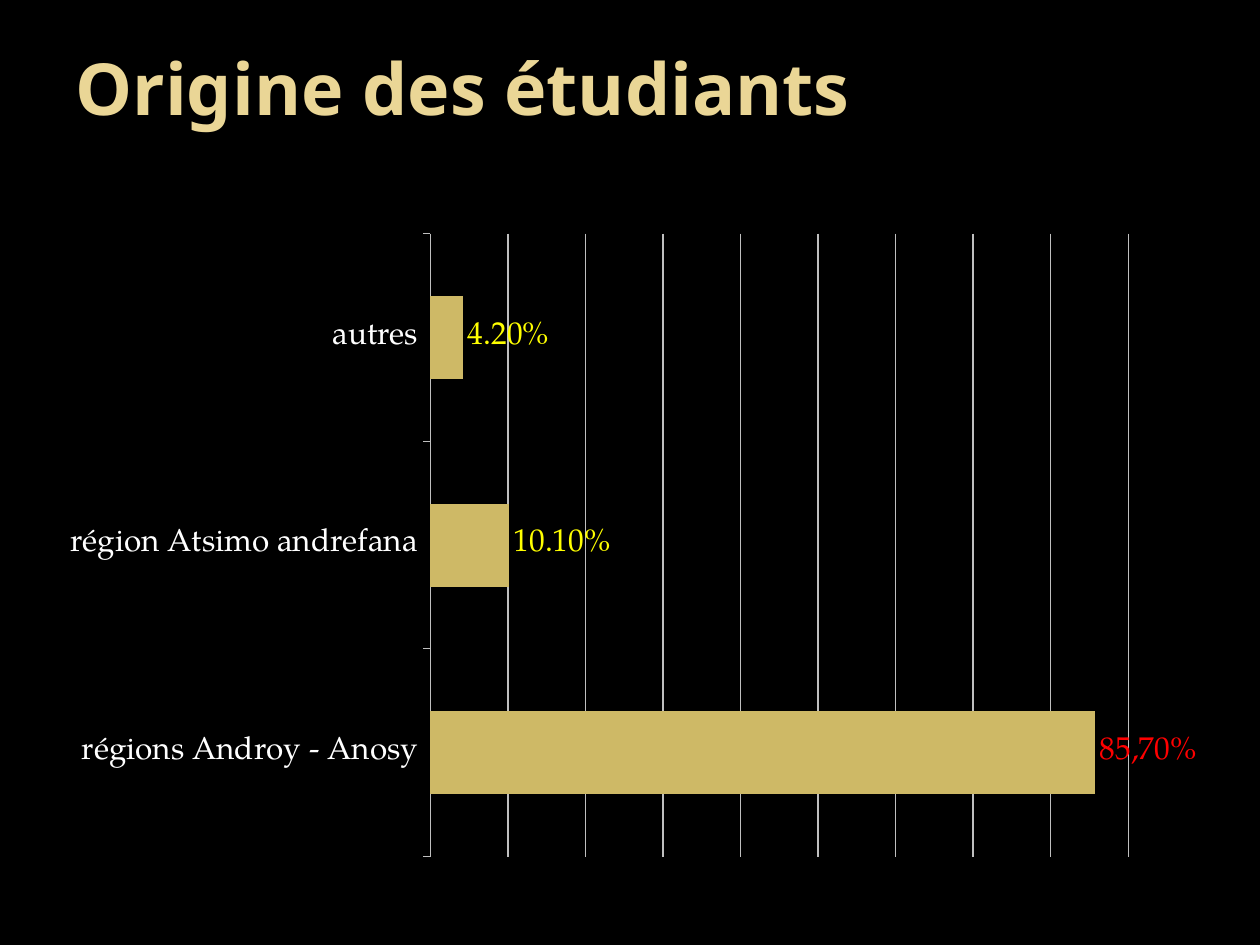
from lxml import etree
from pptx import Presentation, util as u
from pptx.chart import data
from pptx.dml.color import RGBColor
from pptx.enum import chart as c, text

SERIF = "TeX Gyre Pagella"
GRID = "BFBFBF"


def color(value):
    return RGBColor.from_string(value)


def style_font(font, name, size, value):
    font.name = name
    font.size = u.Pt(size)
    font.color.rgb = color(value)


deck = Presentation()
deck.slide_width, deck.slide_height = u.Cm(25.4), u.Cm(19.05)
page = deck.slides.add_slide(deck.slide_layouts[6])
page.background.fill.solid()
page.background.fill.fore_color.rgb = color("000000")

# Title
box = page.shapes.add_textbox(u.Cm(1.27), u.Cm(0.76), u.Cm(22.86), u.Cm(3.18))
box.text_frame.word_wrap = True
box.text_frame.vertical_anchor = text.MSO_ANCHOR.TOP
para = box.text_frame.paragraphs[0]
para.text = "Origine des étudiants"
style_font(para.font, "Noto Sans", 41, "EAD696")
para.font.bold = True

# Bar chart
origins = data.CategoryChartData(number_format="0.00%")
origins.categories = ["régions Androy - Anosy", "région Atsimo andrefana", "autres"]
origins.add_series("Series 1", [0.857, 0.101, 0.042])
chart = page.shapes.add_chart(
    c.XL_CHART_TYPE.BAR_CLUSTERED,
    u.Cm(1.27), u.Cm(4.45), u.Cm(22.86), u.Cm(13.08), origins,
).chart
chart.has_legend = False
chart.has_title = False
style_font(chart.font, SERIF, 18, "FFFFFF")

category_axis = chart.category_axis
category_axis.major_tick_mark = c.XL_TICK_MARK.OUTSIDE
category_axis.format.line.color.rgb = color(GRID)
value_axis = chart.value_axis
value_axis.minimum_scale, value_axis.maximum_scale = 0, 0.9
value_axis.major_unit = 0.1
value_axis.has_major_gridlines = True
value_axis.major_gridlines.format.line.color.rgb = color(GRID)
value_axis.visible = False

plot = chart.plots[0]
plot.gap_width = 150
plot.vary_by_categories = False
bars = plot.series[0]
bars.format.fill.solid()
bars.format.fill.fore_color.rgb = color("CEB966")

labels = bars.data_labels
labels.show_value = True
labels.number_format = "0.00%"
labels.number_format_is_linked = False
labels.position = c.XL_LABEL_POSITION.OUTSIDE_END
style_font(labels.font, SERIF, 18, "FFFF00")
main_label = bars.points[0].data_label
main_label.position = c.XL_LABEL_POSITION.OUTSIDE_END
span = main_label.text_frame.paragraphs[0].add_run()
span.text = "85,70%"
style_font(span.font, SERIF, 18, "FF0000")

# Fixed inner plot area, as fractions of the chart
plot_area = chart._chartSpace.chart.plotArea
namespace = etree.QName(plot_area).namespace
for old_layout in plot_area.findall(f"{{{namespace}}}layout"):
    plot_area.remove(old_layout)
layout = etree.Element(f"{{{namespace}}}layout")
manual = etree.SubElement(layout, f"{{{namespace}}}manualLayout")
settings = {"layoutTarget": "inner", "xMode": "edge", "yMode": "edge",
            "x": "0.325", "y": "0.02", "w": "0.617", "h": "0.96"}
for name, value in settings.items():
    etree.SubElement(manual, f"{{{namespace}}}{name}", val=value)
plot_area.insert(0, layout)

deck.save("out.pptx")
